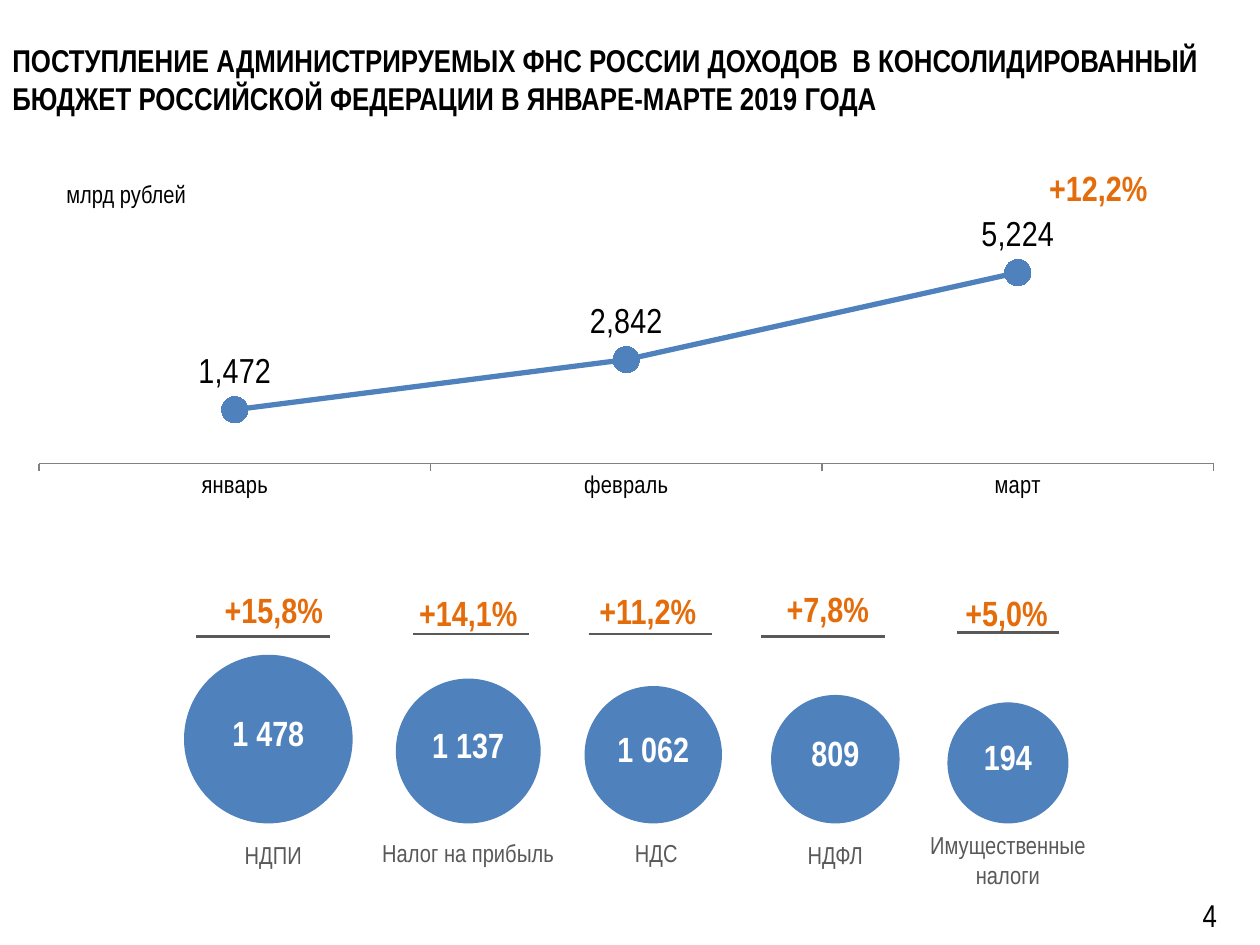
from dataclasses import dataclass

from lxml.etree import SubElement
from pptx import Presentation
from pptx.chart.data import CategoryChartData
from pptx.dml.color import RGBColor
from pptx.enum.chart import XL_CHART_TYPE as ChartType
from pptx.enum.chart import XL_LABEL_POSITION as LabelPosition
from pptx.enum.chart import XL_MARKER_STYLE as MarkerStyle
from pptx.enum.chart import XL_TICK_LABEL_POSITION as TickLabels
from pptx.enum.chart import XL_TICK_MARK as TickMark
from pptx.enum.shapes import MSO_CONNECTOR as Connector
from pptx.enum.shapes import MSO_SHAPE as Shape
from pptx.enum.text import MSO_ANCHOR as Anchor
from pptx.enum.text import PP_ALIGN as Align
from pptx.oxml import parse_xml
from pptx.oxml.ns import nsdecls, qn
from pptx.util import Cm, Pt


@dataclass(frozen=True)
class Theme:
    font: str = "Arial Narrow"
    ink: RGBColor = RGBColor(0, 0, 0)
    white: RGBColor = RGBColor(255, 255, 255)
    blue: RGBColor = RGBColor(0x4F, 0x81, 0xBD)
    orange: RGBColor = RGBColor(0xE4, 0x6C, 0x0A)
    grey: RGBColor = RGBColor(0x59, 0x59, 0x59)
    axis: RGBColor = RGBColor(0x80, 0x80, 0x80)
    small: Pt = Pt(14)
    medium: Pt = Pt(18)
    large: Pt = Pt(20)


@dataclass(frozen=True)
class Box:
    """A region in centimetres."""
    left: float
    top: float
    width: float
    height: float

    def emu(self):
        return Cm(self.left), Cm(self.top), Cm(self.width), Cm(self.height)


@dataclass(frozen=True)
class Tax:
    """Offsets are from the circle's centre line and the top of the region."""
    name: str
    amount: str
    growth: str
    centre: float
    diameter: float
    growth_at: tuple  # x, y
    rule_at: tuple  # x, y, width
    name_at: tuple  # x, y, width


THEME = Theme()
MONTHS = {"январь": 1472, "февраль": 2842, "март": 5224}
TAXES = [
    Tax("НДПИ", "1 478", "+15,8%", 1.70, 3.40,
        (0.11, 0.03), (-0.11, 1.13, 2.71), (0.10, 5.11, 1.68)),
    Tax("Налог на прибыль", "1 137", "+14,1%", 5.73, 2.92,
        (0, 0.09), (0.06, 1.08, 2.34), (0, 5.06, 4.01)),
    Tax("НДС", "1 062", "+11,2%", 9.46, 2.77,
        (-0.11, 0.06), (-0.06, 1.08, 2.49), (0.06, 5.06, 1.37)),
    Tax("НДФЛ", "809", "+7,8%", 13.13, 2.59,
        (-0.15, 0.01), (-0.25, 1.13, 2.49), (0, 5.11, 1.65)),
    Tax("Имущественные\nналоги", "194", "+5,0%", 16.61, 2.44,
        (-0.03, 0.09), (0, 1.05, 2.06), (0, 4.91, 3.68)),
]


def style_text(frame, text, size, color, bold=False, align=Align.LEFT):
    frame.text = text
    for para in frame.paragraphs:
        para.alignment = align
        para.font.name = THEME.font
        para.font.size = size
        para.font.bold = bold
        para.font.color.rgb = color


def add_text(page, box, text, size, color, wrap=False, anchor=Anchor.TOP, **style):
    frame = page.shapes.add_textbox(*box.emu()).text_frame
    frame.word_wrap = wrap
    frame.vertical_anchor = anchor
    style_text(frame, text, size, color, **style)
    return frame


def add_rule(page, left, top, width):
    rule = page.shapes.add_connector(
        Connector.STRAIGHT, Cm(left), Cm(top), Cm(left + width), Cm(top))
    rule.line.color.rgb = THEME.grey
    rule.line.width = Pt(1.5)
    SubElement(rule._element.spPr, qn("a:effectLst"))


def set_plot_layout(chart, x, y, width, height):
    plot_area = chart._chartSpace.chart.plotArea
    for old in plot_area.findall(qn("c:layout")):
        plot_area.remove(old)
    plot_area.insert(0, parse_xml(
        f'<c:layout {nsdecls("c")}><c:manualLayout><c:layoutTarget val="inner"/>'
        '<c:xMode val="edge"/><c:yMode val="edge"/>'
        f'<c:x val="{x}"/><c:y val="{y}"/><c:w val="{width}"/><c:h val="{height}"/>'
        '</c:manualLayout></c:layout>'))


def add_revenue_chart(page, box):
    data = CategoryChartData(number_format="#,##0")
    data.categories = list(MONTHS)
    data.add_series("Series 1", list(MONTHS.values()))
    chart = page.shapes.add_chart(
        ChartType.LINE_MARKERS_STACKED, *box.emu(), data).chart
    chart.has_legend = False
    chart.has_title = False
    chart.font.name = THEME.font
    chart.font.size = THEME.medium
    chart.font.color.rgb = THEME.ink
    set_plot_layout(chart, 0.02, 0.1, 0.97, 0.77)

    # Axes
    months = chart.category_axis
    months.major_tick_mark = TickMark.OUTSIDE
    months.tick_label_position = TickLabels.NEXT_TO_AXIS
    months.tick_labels.font.size = THEME.small
    months.format.line.color.rgb = THEME.axis
    months.format.line.width = Pt(0.75)
    values = chart.value_axis
    values.minimum_scale = -200
    values.maximum_scale = 5800
    values.has_major_gridlines = False
    values.visible = False

    # Line, markers and labels
    plot = chart.plots[0]
    plot.vary_by_categories = False
    series = plot.series[0]
    series.smooth = False
    series.format.line.color.rgb = THEME.blue
    series.format.line.width = Pt(3)
    series.marker.style = MarkerStyle.CIRCLE
    series.marker.size = 15
    series.marker.format.fill.solid()
    series.marker.format.fill.fore_color.rgb = THEME.blue
    series.marker.format.line.color.rgb = THEME.white
    labels = series.data_labels
    labels.show_value = True
    labels.position = LabelPosition.ABOVE
    labels.number_format = "#,##0"
    labels.number_format_is_linked = False
    labels.font.name = THEME.font
    labels.font.size = THEME.large
    labels.font.color.rgb = THEME.ink


def add_tax(page, box, tax):
    centre = box.left + tax.centre

    # Circle standing on the common base line
    circle = page.shapes.add_shape(Shape.OVAL, *Box(
        centre - tax.diameter / 2, box.top + 4.9 - tax.diameter,
        tax.diameter, tax.diameter).emu())
    circle.shadow.inherit = False
    circle.fill.solid()
    circle.fill.fore_color.rgb = THEME.blue
    circle.line.fill.background()
    frame = circle.text_frame
    frame.word_wrap = False
    frame.vertical_anchor = Anchor.MIDDLE
    frame.margin_top, frame.margin_bottom = 0, Cm(0.25)
    style_text(frame, tax.amount, THEME.large, THEME.white, True, Align.CENTER)

    # Growth above a rule
    x, y = tax.growth_at
    add_text(page, Box(centre + x - 1.25, box.top + y, 2.5, 1.11), tax.growth,
             THEME.large, THEME.orange, bold=True, align=Align.CENTER)
    x, y, width = tax.rule_at
    add_rule(page, centre + x - width / 2, box.top + y, width)

    # Name below
    x, y, width = tax.name_at
    height = 0.86 + 0.6 * tax.name.count("\n")
    add_text(page, Box(centre + x - width / 2, box.top + y, width, height), tax.name,
             THEME.small, THEME.grey, align=Align.CENTER)


def add_header(page, box):
    add_text(page, box, "ПОСТУПЛЕНИЕ АДМИНИСТРИРУЕМЫХ ФНС РОССИИ ДОХОДОВ  В "
             "КОНСОЛИДИРОВАННЫЙ БЮДЖЕТ РОССИЙСКОЙ ФЕДЕРАЦИИ В ЯНВАРЕ-МАРТЕ 2019 ГОДА",
             THEME.medium, THEME.ink, wrap=True, anchor=Anchor.MIDDLE, bold=True)


def add_page_number(page, box):
    frame = add_text(page, box, "4", THEME.medium, THEME.ink, wrap=True,
                     anchor=Anchor.MIDDLE, align=Align.CENTER)
    frame.paragraphs[0].line_spacing = Pt(30.1)


def main():
    deck = Presentation()
    deck.slide_width, deck.slide_height = Cm(25.4), Cm(19.05)
    page = deck.slides.add_slide(deck.slide_layouts[6])

    add_header(page, Box(0, 0, 25.4, 3.18))
    add_revenue_chart(page, Box(0.3, 4.45, 24.41, 5.79))
    add_text(page, Box(1.09, 3.48, 3.1, 0.86), "млрд рублей", THEME.small, THEME.ink)
    add_text(page, Box(20.9, 3.23, 2.51, 1.11), "+12,2%",
             THEME.large, THEME.orange, bold=True)
    for tax in TAXES:
        add_tax(page, Box(3.71, 11.7, 18.5, 6.4), tax)
    add_page_number(page, Box(23.39, 17.32, 2, 1.93))

    deck.save("out.pptx")


if __name__ == "__main__":
    main()
